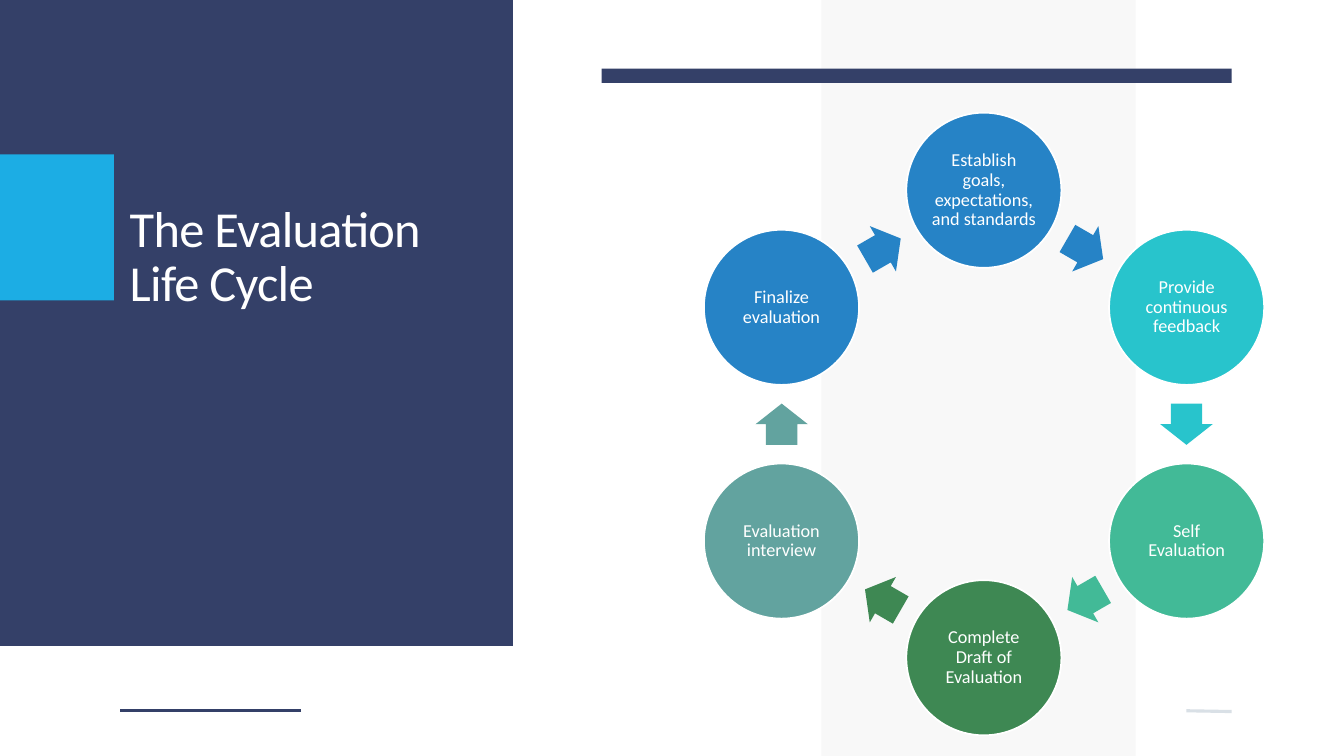
import math

import lxml.etree
import pptx
import pptx.dml.color
import pptx.enum.shapes
import pptx.enum.text
import pptx.oxml.ns
import pptx.util

Cm = pptx.util.Cm
SHAPE = pptx.enum.shapes.MSO_SHAPE
ALIGN = pptx.enum.text.PP_ALIGN
ANCHOR = pptx.enum.text.MSO_ANCHOR

NAVY, SKY, PALE, WHITE = "344068", "1CADE4", "D9E0E6", "FFFFFF"
STAGES = [
    ("Establish goals, expectations, and standards", "2683C6"),
    ("Provide continuous feedback", "28C4CC"),
    ("Self Evaluation", "42BA97"),
    ("Complete Draft of Evaluation", "3E8853"),
    ("Evaluation interview", "62A39F"),
    ("Finalize evaluation", "2683C6"),
]
CENTER_X, CENTER_Y, RADIUS = 24.8, 10.69, 5.89
CIRCLE_SIZE = 3.91
ARROW_WIDTH, ARROW_HEIGHT = 1.04, 1.32


def color(hex_value):
    return pptx.dml.color.RGBColor.from_string(hex_value)


def set_format(target, values):
    for name, value in values.items():
        setattr(target, name, value)


def add_filled(page, kind, left, top, width, height, fill):
    shape = page.shapes.add_shape(kind, Cm(left), Cm(top), Cm(width), Cm(height))
    shape.shadow.inherit = False
    shape.fill.solid()
    shape.fill.fore_color.rgb = color(fill)
    shape.line.fill.background()
    return shape


def set_opacity(shape, percent):
    solid = shape.fill.fore_color._xFill
    alpha = lxml.etree.SubElement(solid[0], pptx.oxml.ns.qn("a:alpha"))
    alpha.set("val", str(percent * 1000))


def add_rule(page, x1, y1, x2, y2, stroke):
    rule = page.shapes.add_connector(
        pptx.enum.shapes.MSO_CONNECTOR.STRAIGHT, Cm(x1), Cm(y1), Cm(x2), Cm(y2))
    rule.line.color.rgb = color(stroke)
    rule.line.width = pptx.util.Pt(2.25)
    lxml.etree.SubElement(rule._element.spPr, pptx.oxml.ns.qn("a:effectLst"))


def write_text(shape, text, size, alignment, anchor):
    frame = shape.text_frame
    set_format(frame, {"word_wrap": True, "vertical_anchor": anchor})
    para = frame.paragraphs[0]
    set_format(para, {"alignment": alignment, "line_spacing": 0.9})
    span = para.add_run()
    span.text = text
    set_format(span.font, {"name": "Calibri", "size": pptx.util.Pt(size)})
    span.font.color.rgb = color(WHITE)
    return span


def add_title(page, text):
    box = page.shapes.add_textbox(Cm(3.02), Cm(2.18), Cm(8.53), Cm(5.82))
    span = write_text(box, text, 36, ALIGN.LEFT, ANCHOR.BOTTOM)
    span.font._element.set("spc", "-50")


def ring_corner(angle, radius, width, height):
    """Top left of an item centred at an angle, clockwise from the top of the ring."""
    turn = math.radians(angle)
    return (round(CENTER_X + radius * math.sin(turn) - width / 2, 2),
            round(CENTER_Y - radius * math.cos(turn) - height / 2, 2))


def add_stage(page, angle, text, fill):
    left, top = ring_corner(angle, RADIUS, CIRCLE_SIZE, CIRCLE_SIZE)
    circle = add_filled(page, SHAPE.OVAL, left, top, CIRCLE_SIZE, CIRCLE_SIZE, fill)
    circle.line.color.rgb = color(WHITE)
    circle.line.width = pptx.util.Pt(1.25)
    sides = ("left", "top", "right", "bottom")
    set_format(circle.text_frame, {f"margin_{side}": Cm(0.05) for side in sides})
    write_text(circle, text, 13, ALIGN.CENTER, ANCHOR.MIDDLE)


def add_arrow(page, angle, fill):
    """Place an arrow midway between two stages, pointing clockwise."""
    radius = RADIUS * math.cos(math.radians(180 / len(STAGES)))
    left, top = ring_corner(angle, radius, ARROW_WIDTH, ARROW_HEIGHT)
    arrow = add_filled(page, SHAPE.RIGHT_ARROW, left, top,
                       ARROW_WIDTH, ARROW_HEIGHT, fill)
    arrow.rotation = angle
    arrow.adjustments[0] = 0.6
    arrow.adjustments[1] = 0.5


def add_cycle(page):
    step = 360 / len(STAGES)
    for index, (text, fill) in enumerate(STAGES):
        add_stage(page, index * step, text, fill)
        add_arrow(page, (index + 0.5) * step, fill)


def main():
    deck = pptx.Presentation()
    set_format(deck, {"slide_width": Cm(33.87), "slide_height": Cm(19.05)})
    page = deck.slides.add_slide(deck.slide_layouts[6])

    band = add_filled(page, SHAPE.PARALLELOGRAM, 20.7, 0, 7.92, 19.05, "F2F2F2")
    band.adjustments[0] = 0
    set_opacity(band, 51)
    add_filled(page, SHAPE.RECTANGLE, 0, 0, 12.93, 16.28, NAVY)
    add_filled(page, SHAPE.RECTANGLE, 0, 3.89, 2.87, 3.68, SKY)
    add_filled(page, SHAPE.RECTANGLE, 15.16, 1.73, 15.88, 0.36, NAVY)
    add_rule(page, 7.59, 17.91, 3.02, 17.91, NAVY)
    add_rule(page, 31.04, 17.93, 29.9, 17.91, PALE)
    add_title(page, "The Evaluation Life Cycle")
    add_cycle(page)
    deck.save("out.pptx")


if __name__ == "__main__":
    main()
